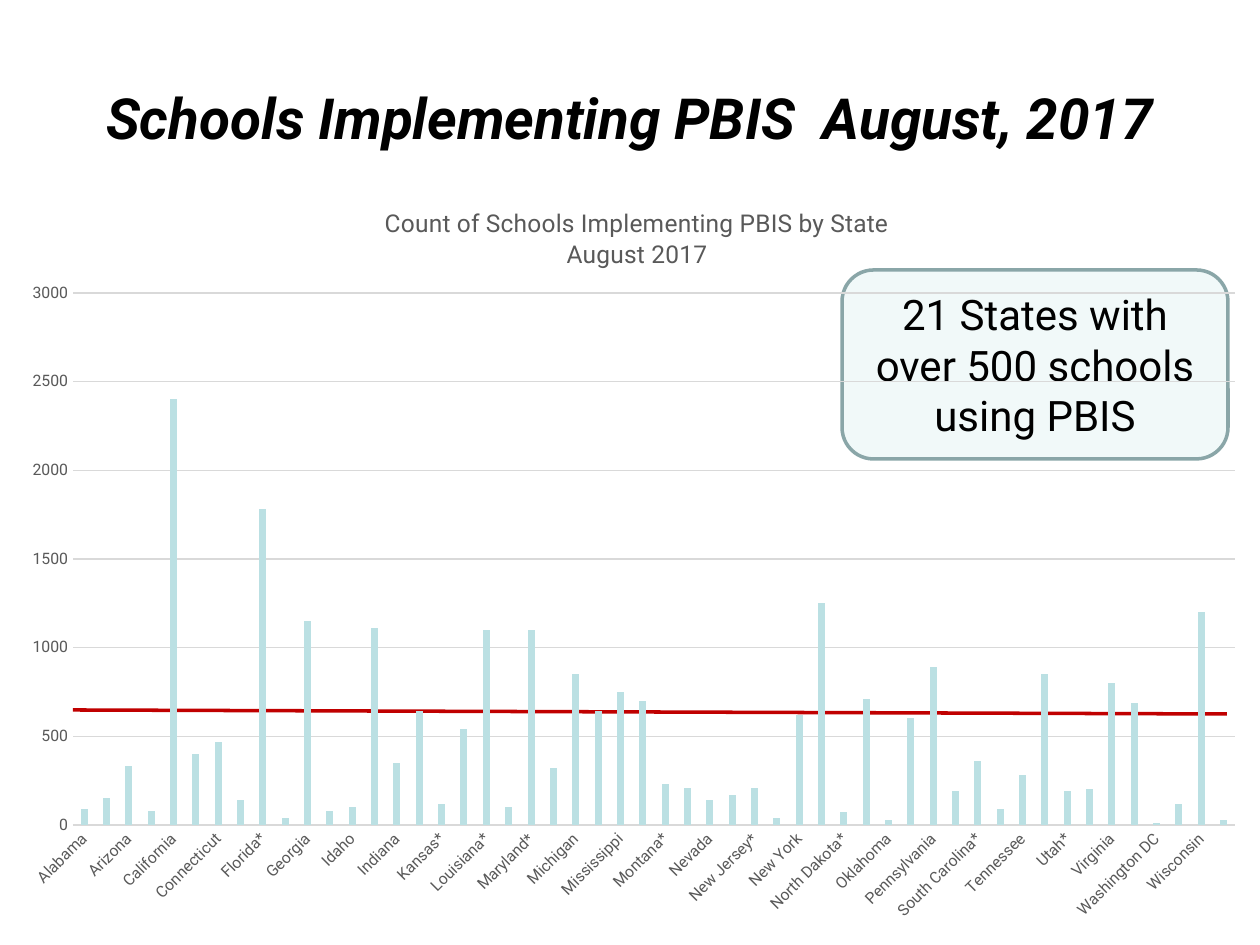
from lxml import etree
from pptx import Presentation
from pptx.chart.data import CategoryChartData
from pptx.dml.color import RGBColor
from pptx.enum.chart import XL_CHART_TYPE as ChartType, XL_TICK_MARK as TickMark
from pptx.enum.shapes import MSO_CONNECTOR as Connector, MSO_SHAPE as Shape
from pptx.enum.text import MSO_ANCHOR as Anchor, PP_ALIGN as Align
from pptx.oxml.ns import qn
from pptx.util import Pt

PX = 914400 / 126
FONT = "Roboto"
COLORS = {
    "text": "000000", "muted": "595959", "grid": "D9D9D9", "bar": "BBE0E3",
    "mean": "C00000", "callout": "F1F9F9", "callout_line": "8AA6A8",
}
SCHOOLS = {
    "Alabama": 90, "Alaska": 150, "Arizona": 330, "Arkansas": 80,
    "California": 2400, "Colorado*": 400, "Connecticut": 470, "Delaware": 140,
    "Florida*": 1780, "Guam": 40, "Georgia": 1150, "Hawaii": 80,
    "Idaho": 100, "Illinois": 1110, "Indiana": 350, "Iowa*": 640,
    "Kansas*": 120, "Kentucky": 540, "Louisiana*": 1100, "Maine": 100,
    "Maryland*": 1100, "Massachusetts": 320, "Michigan": 850, "Minnesota": 640,
    "Mississippi": 750, "Missouri*": 700, "Montana*": 230, "Nebraska": 210,
    "Nevada": 140, "New Hampshire": 170, "New Jersey*": 210, "New Mexico": 40,
    "New York": 620, "North Carolina*": 1250, "North Dakota*": 70, "Ohio": 710,
    "Oklahoma": 30, "Oregon*": 600, "Pennsylvania": 890, "Rhode Island": 190,
    "South Carolina*": 360, "South Dakota": 90, "Tennessee": 280, "Texas": 850,
    "Utah*": 190, "Vermont": 200, "Virginia": 800, "Washington State": 690,
    "Washington DC": 10, "West Virginia": 120, "Wisconsin": 1200, "Wyoming": 30,
}


def px(*lengths):
    return [round(length * PX) for length in lengths]


def color(name):
    return RGBColor.from_string(COLORS[name])


def set_font(font, size, color_name="text", bold=False, italic=False):
    font.name, font.size, font.bold, font.italic = FONT, Pt(size), bold, italic
    font.color.rgb = color(color_name)


def write(frame, text, align=Align.CENTER, anchor=Anchor.MIDDLE, **style):
    frame.word_wrap = True
    frame.vertical_anchor = anchor
    for index, line in enumerate(text.split("\n")):
        paragraph = frame.add_paragraph() if index else frame.paragraphs[0]
        paragraph.alignment = align
        run = paragraph.add_run()
        run.text = line
        set_font(run.font, **style)


def set_line(line, color_name, width):
    line.color.rgb = color(color_name)
    line.width = Pt(width)


def add_title(slide, left, top, width, height):
    title = slide.shapes.title
    title.left, title.top, title.width, title.height = px(left, top, width, height)
    write(title.text_frame, "Schools Implementing PBIS  August, 2017",
          size=32.4, bold=True, italic=True)


def add_callout(slide, left, top, width, height):
    callout = slide.shapes.add_shape(
        Shape.ROUNDED_RECTANGLE, *px(left, top, width, height))
    callout.shadow.inherit = False
    callout.fill.solid()
    callout.fill.fore_color.rgb = color("callout")
    set_line(callout.line, "callout_line", 2)
    write(callout.text_frame, "21 States with over 500 schools using PBIS", size=24)


def add_mean_line(slide, left, top, width, drop):
    line = slide.shapes.add_connector(
        Connector.STRAIGHT, *px(left, top, left + width, top + drop))
    set_line(line.line, "mean", 2)
    etree.SubElement(line._element.spPr, qn("a:effectLst"))


def make_layout(**settings):
    """Return a manual chart layout with the given settings in schema order."""
    layout = etree.Element(qn("c:layout"))
    manual = etree.SubElement(layout, qn("c:manualLayout"))
    for tag, value in settings.items():
        etree.SubElement(manual, qn(f"c:{tag}")).set("val", str(value))
    return layout


def format_axis(axis):
    axis.major_tick_mark = axis.minor_tick_mark = TickMark.NONE
    set_font(axis.tick_labels.font, 9, "muted")


def add_state_chart(slide, left, top, width, height):
    data = CategoryChartData()
    data.categories = list(SCHOOLS)
    data.add_series("Series 1", list(SCHOOLS.values()))
    chart = slide.shapes.add_chart(
        ChartType.COLUMN_CLUSTERED, *px(left, top, width, height), data).chart
    set_font(chart.font, 10)
    chart.has_legend = False

    # Bars
    plot = chart.plots[0]
    plot.gap_width, plot.overlap, plot.vary_by_categories = 219, -27, False
    fill = plot.series[0].format.fill
    fill.solid()
    fill.fore_color.rgb = color("bar")

    # Axes, with every second state labelled
    states, counts = chart.category_axis, chart.value_axis
    format_axis(states)
    format_axis(counts)
    set_line(states.format.line, "grid", 0.75)
    counts.format.line.fill.background()
    set_line(counts.major_gridlines.format.line, "grid", 0.75)
    counts.minimum_scale, counts.maximum_scale, counts.major_unit = 0, 3000, 500
    states._element.find(qn("c:txPr")).find(qn("a:bodyPr")).set("rot", "-2700000")
    skip = etree.Element(qn("c:tickLblSkip"))
    skip.set("val", "2")
    states._element.find(qn("c:noMultiLvlLbl")).addprevious(skip)

    # Heading
    chart.has_title = True
    heading = chart.chart_title
    heading.include_in_layout = False
    write(heading.text_frame, "Count of Schools Implementing PBIS by State\nAugust 2017",
          size=14, color_name="muted")

    # Places of the heading and the plot inside the chart
    title_element = heading._element
    plot_area = chart._chartSpace.chart.plotArea
    for parent in (title_element, plot_area):
        for old in parent.findall(qn("c:layout")):
            parent.remove(old)
    title_element.find(qn("c:tx")).addnext(make_layout(
        xMode="edge", yMode="edge", x=round(373 / width, 4), y=round(29 / height, 4)))
    plot_area.insert(0, make_layout(
        layoutTarget="inner", xMode="edge", yMode="edge",
        x=round(65 / width, 4), y=round(119 / height, 4),
        w=round(1162 / width, 4), h=round(532 / height, 4)))


def main():
    presentation = Presentation()
    presentation.slide_width, presentation.slide_height = px(1260, 945)
    slide = presentation.slides.add_slide(presentation.slide_layouts[5])
    add_title(slide, 63, 38, 1134, 157)
    add_callout(slide, 842, 270, 386, 189)
    add_mean_line(slide, 73, 710, 1154, 4)
    add_state_chart(slide, 8, 174, 1252, 761)
    presentation.save("out.pptx")


if __name__ == "__main__":
    main()
